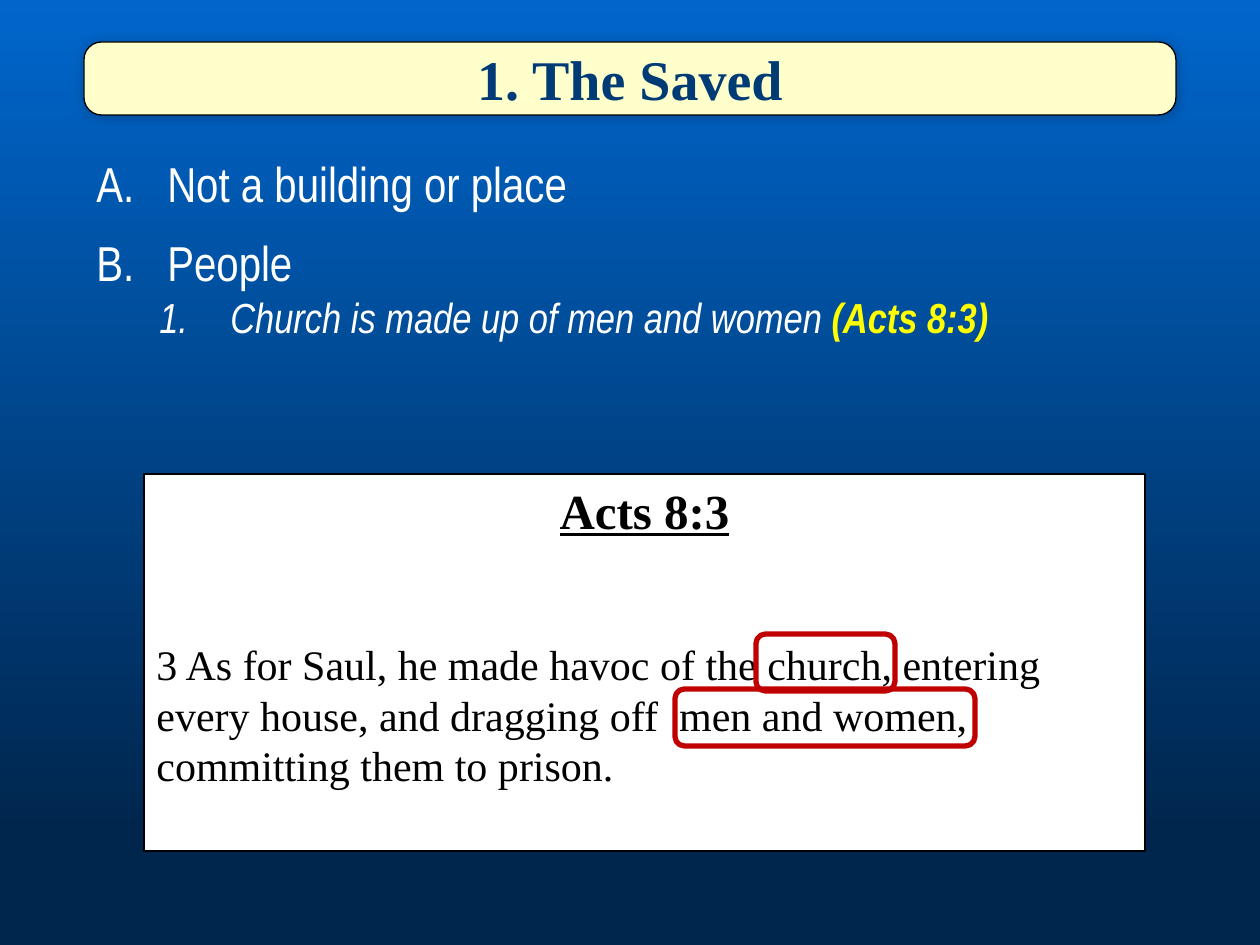
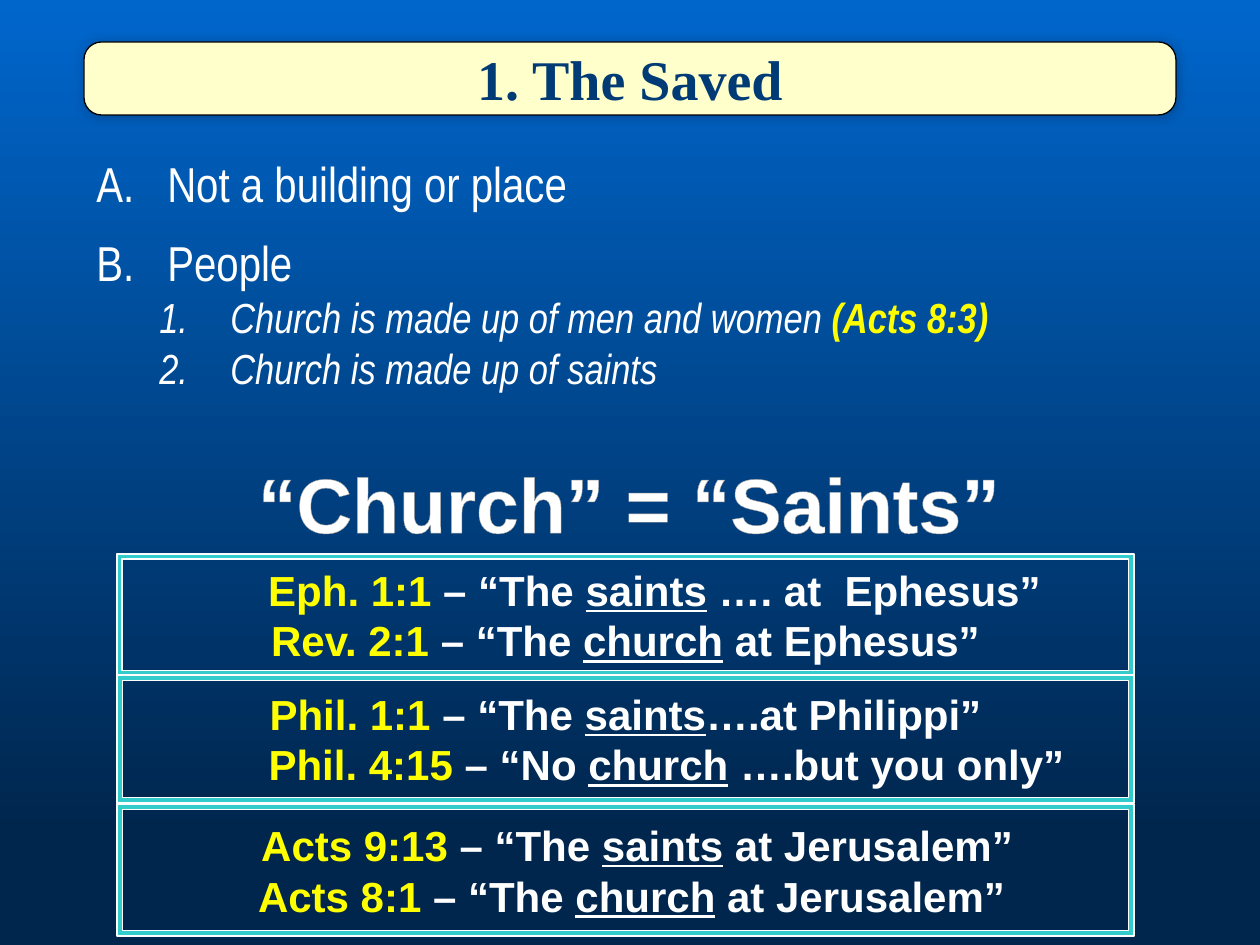
from lxml import etree
from pptx import Presentation
from pptx.dml.color import RGBColor
from pptx.enum.shapes import MSO_SHAPE
from pptx.enum.text import MSO_ANCHOR, PP_ALIGN
from pptx.oxml.ns import qn
from pptx.util import Pt

PX = 914400 / 126  # EMU per px
LEFT, CENTER = PP_ALIGN.LEFT, PP_ALIGN.CENTER
TOP, MIDDLE = MSO_ANCHOR.TOP, MSO_ANCHOR.MIDDLE
RECT, FRAME = MSO_SHAPE.RECTANGLE, MSO_SHAPE.FRAME
ROUNDED = MSO_SHAPE.ROUNDED_RECTANGLE

SKY = RGBColor(0x00, 0x66, 0xCC)
NIGHT = RGBColor(0x00, 0x26, 0x4D)
NAVY = RGBColor(0x00, 0x3B, 0x76)
CREAM = RGBColor(0xFF, 0xFF, 0xCC)
TEAL = RGBColor(0x33, 0xCC, 0xCC)
YELLOW = RGBColor(0xFF, 0xFF, 0x00)
RED = RGBColor(0xC0, 0x00, 0x00)
WHITE = RGBColor(0xFF, 0xFF, 0xFF)
BLACK = RGBColor(0x00, 0x00, 0x00)

SERIF, SANS, NARROW = "Times New Roman", "Arial", "Arial Narrow"


def add_box(s, kind, x, y, w, h, fill=None, line=BLACK, width=0.75, adj=None, anchor=TOP):
    """Add a preset shape, or a plain text box when kind is None; sizes in px."""
    place = [round(v * PX) for v in (x, y, w, h)]
    if kind is None:
        sp = s.shapes.add_textbox(*place)
    else:
        sp = s.shapes.add_shape(kind, *place)
        sp.shadow.inherit = False
        sp.line.color.rgb = line
        sp.line.width = Pt(width)
        if fill is None:
            sp.fill.background()
        else:
            sp.fill.solid()
            sp.fill.fore_color.rgb = fill
        if adj is not None:
            sp.adjustments[0] = adj
    sp.text_frame.word_wrap = True
    sp.text_frame.vertical_anchor = anchor
    return sp


def add_text(tf, *runs, font=SANS, size=24, color=WHITE, bold=False, italic=False,
             align=LEFT, before=0, margin=0, hanging=0, number=None, level=0):
    """Add a paragraph; each run is a string or (string, font overrides)."""
    p = tf.add_paragraph() if tf.paragraphs[0].runs else tf.paragraphs[0]
    p.alignment = align
    p.level = level
    p.space_before = Pt(before)
    pPr = p._p.get_or_add_pPr()
    pPr.set("marL", str(round(margin * PX)))
    pPr.set("indent", str(round(-hanging * PX)))
    if number:
        etree.SubElement(pPr, qn("a:buAutoNum"), type=number)
    for run in runs:
        text, changes = (run, {}) if isinstance(run, str) else run
        r = p.add_run()
        r.text = text
        r.font.name = font
        r.font.size = Pt(size)
        r.font.color.rgb = changes.get("color", color)
        r.font.bold = changes.get("bold", bold)
        r.font.italic = italic
        r.font.underline = changes.get("underline", False)
    return p


prs = Presentation()
prs.slide_width = round(1260 * PX)
prs.slide_height = round(945 * PX)

# Shared background
bg = prs.slide_master.background.fill
bg.gradient()
bg.gradient_angle = 270
for stop, color, position in zip(bg.gradient_stops, (SKY, NIGHT), (0, 0.88)):
    stop.color.rgb = color
    stop.position = position

# Shared title and outline
topics = dict(font=NARROW, size=28, margin=71, hanging=71, number="alphaUcPeriod")
points = dict(font=NARROW, size=24, italic=True, margin=134, hanging=71,
              number="arabicPeriod", level=1)
men_and_women = ("Church is made up of men and women ",
                 ("(Acts 8:3)", dict(color=YELLOW, bold=True)))
saints = ("Church is made up of saints",)

slides = []
for point_list in ([men_and_women], [men_and_women, saints]):
    s = prs.slides.add_slide(prs.slide_layouts[6])
    slides.append(s)

    title = add_box(s, ROUNDED, 84, 42, 1092, 73, fill=CREAM, adj=0.24, anchor=MIDDLE)
    add_text(title.text_frame, "1. The Saved", font=SERIF, size=32, color=NAVY,
             bold=True, align=CENTER)
    effects = title._element.spPr.find(qn("a:effectLst"))
    shadow = etree.SubElement(effects, qn("a:outerShdw"), blurRad=str(Pt(6)),
                              dist="0", dir="13500000", algn="ctr", rotWithShape="0")
    tint = etree.SubElement(shadow, qn("a:srgbClr"), val=str(BLACK))
    etree.SubElement(tint, qn("a:alpha"), val="20000")

    tf = add_box(s, None, 84, 147, 1134, 153 + 51 * len(point_list)).text_frame
    add_text(tf, "Not a building or place", **topics)
    add_text(tf, "People", before=12, **topics)
    for point in point_list:
        add_text(tf, *point, **points)

# Slide 1: scripture panel with marked words
s = slides[0]
tf = add_box(s, RECT, 144, 474, 1001, 377, fill=WHITE).text_frame
add_text(tf, ("Acts 8:3", dict(underline=True)), font=SERIF, size=28, color=BLACK,
         bold=True, align=CENTER)
add_text(tf, "3 As for Saul, he made havoc of the church, entering every house, "
         "and dragging off  men and women, committing them to prison.",
         font=SERIF, color=BLACK, before=57)
for x, y, w in ((756, 634, 139), (675, 689, 300)):
    add_box(s, ROUNDED, x, y, w, 57, line=RED, width=3)

# Slide 2: equation and paired verses
s = slides[1]
tf = add_box(s, None, 242, 450, 775, 106).text_frame
tf.word_wrap = False
p = add_text(tf, "“Church” = “Saints”", size=44, bold=True, align=CENTER)
rPr = p.runs[0]._r.get_or_add_rPr()
outline = etree.Element(qn("a:ln"), w=str(Pt(0.71)))
outline_fill = etree.SubElement(outline, qn("a:solidFill"))
etree.SubElement(outline_fill, qn("a:srgbClr"), val="A1A1A1")
rPr.insert(0, outline)

# Each verse: left indent in px, reference, lead-in, key word, ending
verse_pairs = [
    (554, 122, [(58, "Eph. 1:1 ", "– “The ", "saints", " …. at  Ephesus”"),
                (0, "Rev. 2:1 ", "– “The ", "church", " at Ephesus”")]),
    (675, 128, [(0, "Phil. 1:1 ", "– “The ", "saints", "….at Philippi”"),
                (82, "Phil. 4:15 ", "– “No ", "church", " ….but you only”")]),
    (804, 132, [(23, "Acts 9:13 ", "– “The ", "saints", " at Jerusalem”"),
                (12, "Acts 8:1 ", "– “The ", "church", " at Jerusalem”")]),
]
for y, h, verses in verse_pairs:
    tf = add_box(s, FRAME, 117, y, 1017, h, fill=TEAL, line=WHITE, adj=0.042,
                 anchor=MIDDLE).text_frame
    for margin, reference, lead, key_word, ending in verses:
        add_text(tf, (reference, dict(color=YELLOW)), lead,
                 (key_word, dict(underline=True)), ending,
                 bold=True, align=CENTER, margin=margin)

prs.save("out.pptx")
